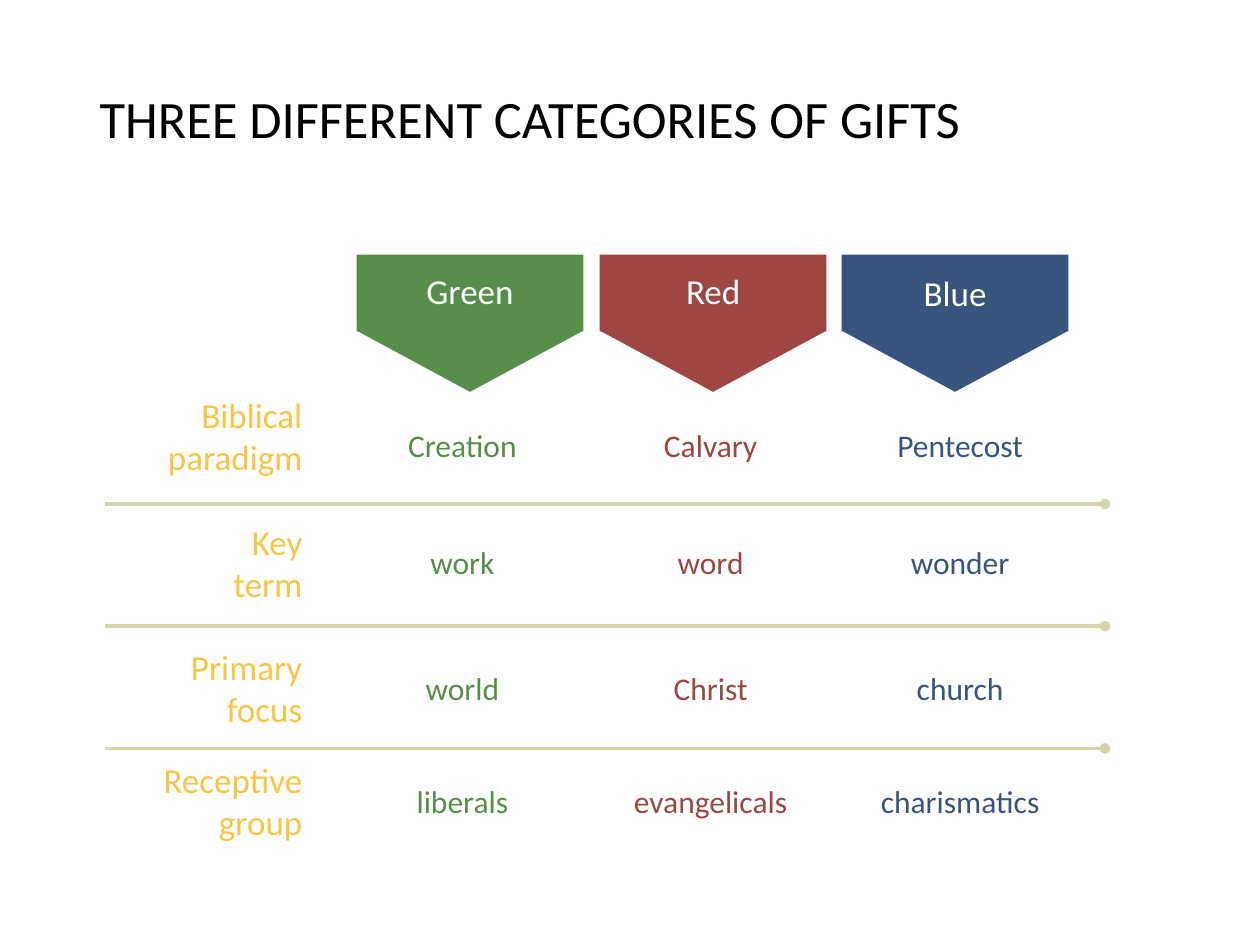
from dataclasses import dataclass

from lxml import etree
from pptx import Presentation
from pptx.dml.color import RGBColor
from pptx.enum.shapes import MSO_CONNECTOR, MSO_SHAPE
from pptx.enum.text import MSO_ANCHOR, MSO_AUTO_SIZE, PP_ALIGN
from pptx.oxml.ns import qn
from pptx.util import Inches, Pt

LEFT, CENTER, RIGHT = PP_ALIGN.LEFT, PP_ALIGN.CENTER, PP_ALIGN.RIGHT
MIDDLE = MSO_ANCHOR.MIDDLE
FIT_SHAPE, NO_FIT = MSO_AUTO_SIZE.SHAPE_TO_FIT_TEXT, MSO_AUTO_SIZE.NONE
RECT, STRAIGHT = MSO_SHAPE.RECTANGLE, MSO_CONNECTOR.STRAIGHT


@dataclass
class Theme:
    font: str = "Calibri"
    title: str = "000000"
    label: str = "F6C646"
    heading: str = "FFFFFF"
    rule: str = "D5D4AE"
    green: str = "578F4A"
    red: str = "9E4643"
    blue: str = "37557E"
    title_size: int = 30
    label_size: int = 20
    cell_size: int = 18


def write(sp, text, size, color, align=CENTER, fit=FIT_SHAPE):
    tf = sp.text_frame
    tf.word_wrap = True
    tf.auto_size = fit
    tf.vertical_anchor = MIDDLE
    tf.margin_left = tf.margin_right = Inches(0.05)
    tf.margin_top = tf.margin_bottom = Inches(0.05)
    for i, line in enumerate(text.split("\n")):
        p = tf.add_paragraph() if i else tf.paragraphs[0]
        p.alignment = align
        r = p.add_run()
        r.text = line
        r.font.name = theme.font
        r.font.size = Pt(size)
        r.font.color.rgb = RGBColor.from_string(color)


theme = Theme()
prs = Presentation()
prs.slide_width, prs.slide_height = Inches(10), Inches(7.5)
s = prs.slides.add_slide(prs.slide_layouts[5])

title = s.shapes.title
title.left, title.top = Inches(0.74), Inches(0.34)
title.width, title.height = Inches(8.55), Inches(1.19)
write(title, "THREE DIFFERENT CATEGORIES OF GIFTS", theme.title_size,
      theme.title, align=LEFT, fit=NO_FIT)

rows = [(3.06, "Biblical\nparadigm"), (4.07, "Key\nterm"),
        (5.06, "Primary\nfocus"), (5.96, "Receptive\ngroup")]
cell_tops = [3.32, 4.25, 5.25, 6.15]
columns = [
    ("Green", theme.green, 3.73, 2.08, 3.67,
     ["Creation", "work", "world", "liberals"]),
    ("Red", theme.red, 5.66, 2.08, 5.64,
     ["Calvary", "word", "Christ", "evangelicals"]),
    ("Blue", theme.blue, 7.58, 2.1, 7.62,
     ["Pentecost", "wonder", "church", "charismatics"]),
]

for top, label in rows:
    sp = s.shapes.add_textbox(Inches(0.46), Inches(top), Inches(1.99), Inches(0.79))
    write(sp, label, theme.label_size, theme.label, align=RIGHT)

for name, color, middle, name_top, cell_middle, cells in columns:
    group = s.shapes.add_group_shape()
    banner = group.shapes.add_shape(RECT, Inches(middle - 0.9), Inches(2.02),
                                    Inches(1.8), Inches(0.61))
    outline = group.shapes.build_freeform(Inches(middle - 0.89), Inches(2.63))
    outline.add_line_segments([(Inches(middle), Inches(3.11)),
                               (Inches(middle + 0.89), Inches(2.63)),
                               (Inches(middle), Inches(2.14))], close=True)
    for sp in (banner, outline.convert_to_shape()):
        sp.shadow.inherit = False
        sp.fill.solid()
        sp.fill.fore_color.rgb = RGBColor.from_string(color)
        sp.line.fill.background()

    sp = s.shapes.add_textbox(Inches(middle - 0.79), Inches(name_top),
                              Inches(1.58), Inches(0.45))
    write(sp, name, theme.label_size, theme.heading)
    for top, cell in zip(cell_tops, cells):
        sp = s.shapes.add_textbox(Inches(cell_middle - 0.79), Inches(top),
                                  Inches(1.58), Inches(0.42))
        write(sp, cell, theme.cell_size, color)

for i in range(3):
    y = Inches(4 + 0.97 * i)
    rule = s.shapes.add_connector(STRAIGHT, Inches(0.83), y, Inches(8.77), y)
    rule.line.color.rgb = RGBColor.from_string(theme.rule)
    rule.line.width = Pt(2)
    etree.SubElement(rule.line._get_or_add_ln(), qn("a:tailEnd"), type="oval")
    etree.SubElement(rule._element.spPr, qn("a:effectLst"))

prs.save("out.pptx")
